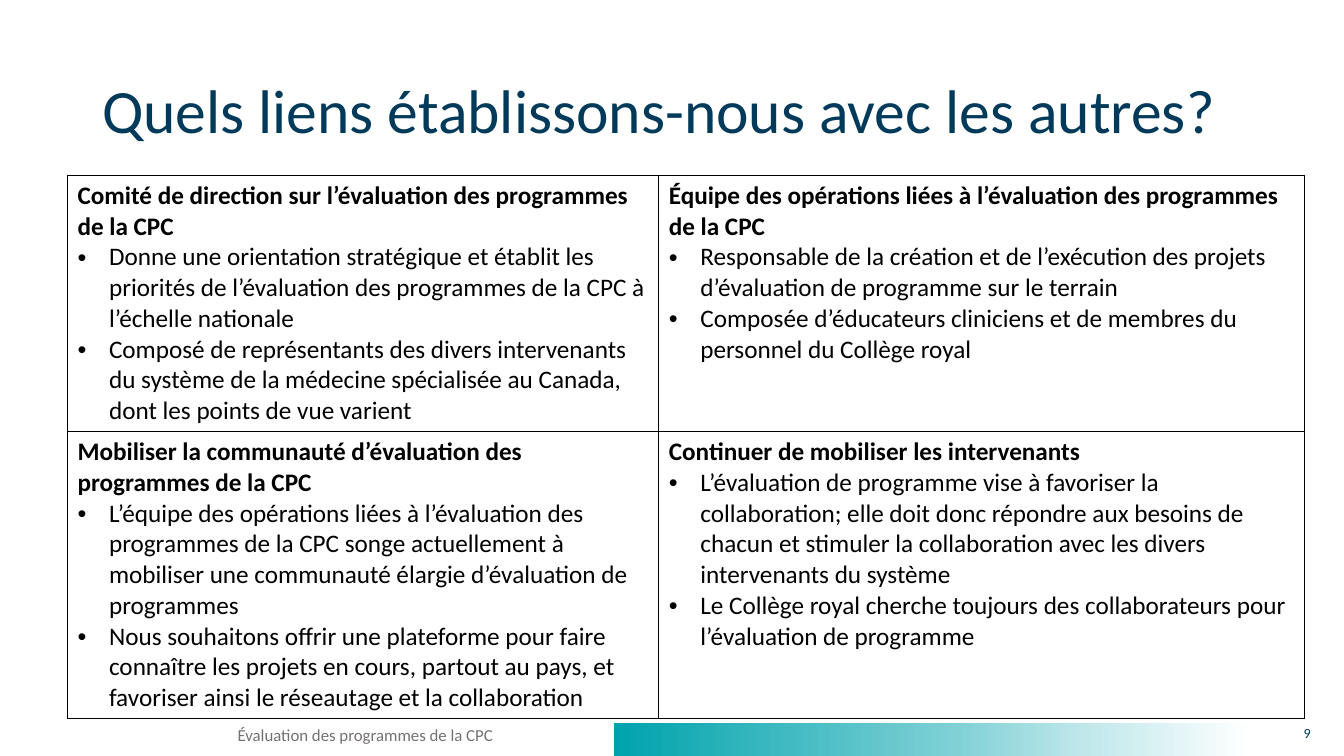
from lxml import etree
from pptx import Presentation
from pptx.dml.color import RGBColor
from pptx.enum.shapes import MSO_SHAPE
from pptx.enum.text import MSO_ANCHOR, PP_ALIGN
from pptx.oxml.ns import qn
from pptx.util import Pt

TITLE = "Quels liens établissons-nous avec les autres?"
FOOTER = "Évaluation des programmes de la CPC"
PAGE_NUMBER = "9"
QUADRANTS = [
    [
        ("Comité de direction sur l’évaluation des programmes de la CPC", [
            "Donne une orientation stratégique et établit les priorités de l’évaluation "
            "des programmes de la CPC à l’échelle nationale",
            "Composé de représentants des divers intervenants du système de la médecine "
            "spécialisée au Canada, dont les points de vue varient",
        ]),
        ("Équipe des opérations liées à l’évaluation des programmes de la CPC", [
            "Responsable de la création et de l’exécution des projets d’évaluation de "
            "programme sur le terrain",
            "Composée d’éducateurs cliniciens et de membres du personnel du Collège royal",
        ]),
    ],
    [
        ("Mobiliser la communauté d’évaluation des programmes de la CPC", [
            "L’équipe des opérations liées à l’évaluation des programmes de la CPC songe "
            "actuellement à mobiliser une communauté élargie d’évaluation de programmes",
            "Nous souhaitons offrir une plateforme pour faire connaître les projets en "
            "cours, partout au pays, et favoriser ainsi le réseautage et la collaboration",
        ]),
        ("Continuer de mobiliser les intervenants", [
            "L’évaluation de programme vise à favoriser la collaboration; elle doit donc "
            "répondre aux besoins de chacun et stimuler la collaboration avec les divers "
            "intervenants du système",
            "Le Collège royal cherche toujours des collaborateurs pour l’évaluation de "
            "programme",
        ]),
    ],
]

FONT = "Calibri"
NAVY = RGBColor(0x00, 0x3A, 0x5B)
GRAY = RGBColor(0x76, 0x71, 0x71)
BLACK = RGBColor(0, 0, 0)
BAND_STOPS = [
    (0, RGBColor(0x00, 0xA3, 0xAD)),
    (54, RGBColor(0x80, 0xD1, 0xD6)),
    (74, RGBColor(0xC0, 0xE8, 0xEB)),
    (100, RGBColor(0xFF, 0xFF, 0xFF)),
]

PAGE_WIDTH, PAGE_HEIGHT = 960, 540
BAND_LEFT, BAND_TOP, BAND_WIDTH = 438.5, 516.2, 455.8
TABLE_LEFT, TABLE_TOP = 48.2, 125.3
COLUMN_WIDTHS = [422.4, 461.3]
ROW_HEIGHTS = [183, 205]
BULLET_INDENT = 22.5
BORDER_WIDTH = 1

LEFT, CENTER, RIGHT = PP_ALIGN.LEFT, PP_ALIGN.CENTER, PP_ALIGN.RIGHT
TOP, MIDDLE = MSO_ANCHOR.TOP, MSO_ANCHOR.MIDDLE
RECTANGLE = MSO_SHAPE.RECTANGLE

# text, (left, top, width, height), size, colour, alignment, anchor, line spacing
LABELS = [
    (TITLE, (66, 28.8, 828, 104.4), 44, NAVY, LEFT, MIDDLE, 0.9),
    (FOOTER, (101.5, 514.1, 319, 25.2), 12, GRAY, CENTER, TOP, 1.0),
    (PAGE_NUMBER, (894.2, 514.1, 49, 25.2), 10, NAVY, RIGHT, TOP, 1.0),
]


def write(para, text, size, color, bold=False):
    span = para.add_run()
    span.text = text
    span.font.color.rgb = color
    for name, value in {"name": FONT, "size": Pt(size), "bold": bold}.items():
        setattr(span.font, name, value)


def add_stops(parent, stops):
    stop_list = etree.SubElement(parent, qn("a:gsLst"))
    for percent, color in stops:
        stop = etree.SubElement(stop_list, qn("a:gs"), pos=str(percent * 1000))
        etree.SubElement(stop, qn("a:srgbClr"), val=str(color))


def add_band(page):
    band = page.shapes.add_shape(
        RECTANGLE, Pt(BAND_LEFT), Pt(BAND_TOP), Pt(BAND_WIDTH), Pt(PAGE_HEIGHT - BAND_TOP))
    band.shadow.inherit = False
    band.line.fill.background()
    band.fill.gradient()
    band.fill.gradient_angle = 0
    gradient = band.fill._xPr.find(qn("a:gradFill"))
    gradient.remove(gradient.find(qn("a:gsLst")))
    add_stops(gradient, BAND_STOPS)
    gradient.insert(0, gradient[-1])


def add_label(page, text, frame, size, color, alignment, anchor, spacing):
    box = page.shapes.add_textbox(*map(Pt, frame)).text_frame
    box.word_wrap = True
    box.vertical_anchor = anchor
    para = box.paragraphs[0]
    para.alignment = alignment
    para.line_spacing = spacing
    write(para, text, size, color)


def add_bullet(para):
    properties = para._p.get_or_add_pPr()
    properties.set("marL", str(Pt(BULLET_INDENT)))
    properties.set("indent", str(-Pt(BULLET_INDENT)))
    etree.SubElement(properties, qn("a:buFont"), typeface="Arial")
    etree.SubElement(properties, qn("a:buChar"), char="•")


def outline(cell):
    properties = cell._tc.get_or_add_tcPr()
    for side in ("lnL", "lnR", "lnT", "lnB"):
        line = etree.SubElement(properties, qn(f"a:{side}"), w=str(Pt(BORDER_WIDTH)))
        fill = etree.SubElement(line, qn("a:solidFill"))
        etree.SubElement(fill, qn("a:srgbClr"), val=str(BLACK))
    cell.fill.background()


def fill_cell(cell, heading, points):
    outline(cell)
    write(cell.text_frame.paragraphs[0], heading, 18, BLACK, bold=True)
    for point in points:
        para = cell.text_frame.add_paragraph()
        add_bullet(para)
        write(para, point, 18, BLACK)


def add_quadrants(page):
    table = page.shapes.add_table(
        len(ROW_HEIGHTS), len(COLUMN_WIDTHS), Pt(TABLE_LEFT), Pt(TABLE_TOP),
        Pt(sum(COLUMN_WIDTHS)), Pt(sum(ROW_HEIGHTS))).table
    table.first_row = table.horz_banding = False
    for column, width in zip(table.columns, COLUMN_WIDTHS):
        column.width = Pt(width)
    for row, height, contents in zip(table.rows, ROW_HEIGHTS, QUADRANTS):
        row.height = Pt(height)
        for cell, (heading, points) in zip(row.cells, contents):
            fill_cell(cell, heading, points)


def main():
    deck = Presentation()
    deck.slide_width, deck.slide_height = Pt(PAGE_WIDTH), Pt(PAGE_HEIGHT)
    page = deck.slides.add_slide(deck.slide_layouts[6])
    add_band(page)
    add_quadrants(page)
    for label in LABELS:
        add_label(page, *label)
    deck.save("out.pptx")


if __name__ == "__main__":
    main()
